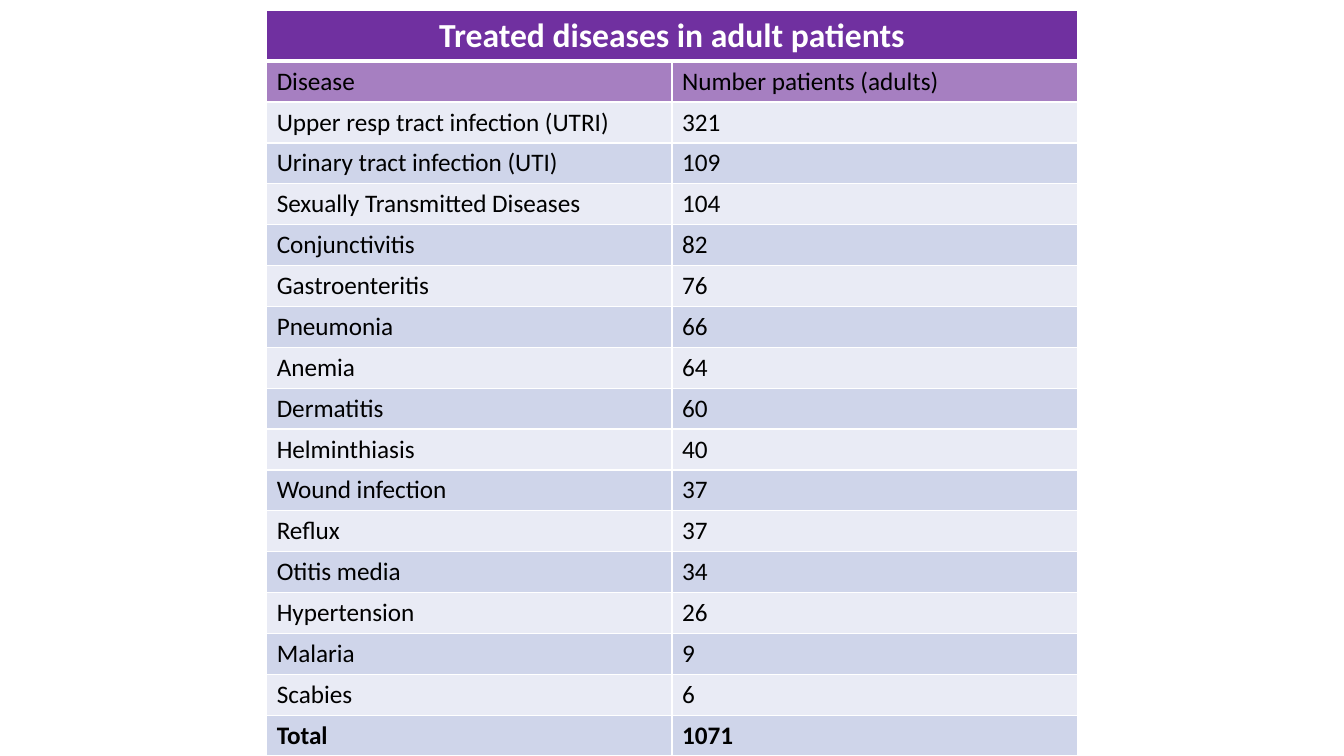
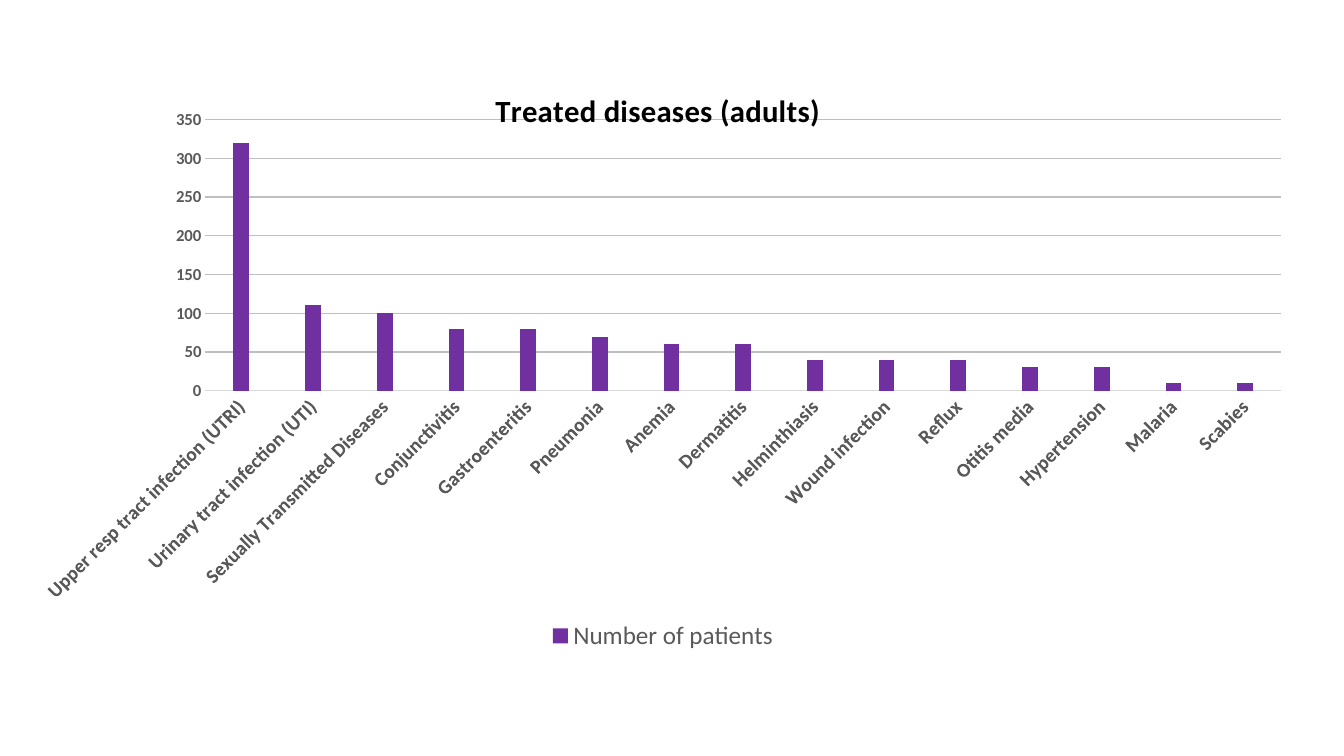
from lxml.etree import SubElement
from pptx import Presentation
from pptx.chart.data import CategoryChartData
from pptx.dml.color import RGBColor
from pptx.enum.chart import XL_CHART_TYPE as ChartType, XL_LEGEND_POSITION as LegendSpot
from pptx.enum.chart import XL_TICK_MARK as TickMark
from pptx.enum.text import PP_ALIGN as Align
from pptx.oxml.ns import qn
from pptx.util import Inches, Pt

FONT = "Calibri"
COLORS = {
    name: RGBColor.from_string(value)
    for name, value in {
        "purple": "7030A0", "lilac": "A67FC1", "light": "E9EBF5", "dark": "CFD5EA",
        "white": "FFFFFF", "black": "000000", "label": "595959",
        "axis": "D9D9D9", "grid": "BFBFBF",
    }.items()
}
PATIENTS = {
    "Upper resp tract infection (UTRI)": 321,
    "Urinary tract infection (UTI)": 109,
    "Sexually Transmitted Diseases": 104,
    "Conjunctivitis": 82,
    "Gastroenteritis": 76,
    "Pneumonia": 66,
    "Anemia": 64,
    "Dermatitis": 60,
    "Helminthiasis": 40,
    "Wound infection": 37,
    "Reflux": 37,
    "Otitis media": 34,
    "Hypertension": 26,
    "Malaria": 9,
    "Scabies": 6,
}


def style(font, size, color, bold=False):
    font.name, font.size, font.bold = FONT, Pt(size), bold
    font.color.rgb = COLORS[color]


def place(part, index, **shares):
    """Give a chart part a manual layout, in shares of the chart's size."""
    old = part.find(qn("c:layout"))
    if old is not None:
        part.remove(old)
    layout = SubElement(part, qn("c:layout"))
    part.insert(index, layout)
    manual = SubElement(layout, qn("c:manualLayout"))
    for tag, value in shares.items():
        SubElement(manual, qn(f"c:{tag}")).set("val", str(value))


deck = Presentation()
deck.slide_width, deck.slide_height = Inches(13.33), Inches(7.5)
W = deck.slide_width
blank = deck.slide_layouts[6]

# Table of diseases
rows = [
    ("Treated diseases in adult patients", ""),
    ("Disease", "Number patients (adults)"),
    *PATIENTS.items(),
    ("Total", sum(PATIENTS.values())),
]
title_height, row_height = Inches(0.49), Inches(0.4)
table_width = Inches(8.04)
diseases = deck.slides.add_slide(blank).shapes.add_table(
    len(rows), 2, (W - table_width) // 2, Inches(0.1),
    table_width, title_height + row_height * (len(rows) - 1),
).table
diseases.cell(0, 0).merge(diseases.cell(0, 1))

for r, row in enumerate(rows):
    is_title, is_total = r == 0, r == len(rows) - 1
    diseases.rows[r].height = title_height if is_title else row_height
    fill = ("purple", "lilac")[r] if r < 2 else ("light", "dark")[r % 2]
    for c, text in enumerate(row):
        cell = diseases.cell(r, c)
        borders = cell._tc.get_or_add_tcPr()
        for side in ("lnL", "lnR", "lnT", "lnB"):
            thick = (is_title and side == "lnB") or (r == 1 and side == "lnT")
            line = SubElement(borders, qn(f"a:{side}"), w=str(Pt(3 if thick else 1)))
            paint = SubElement(line, qn("a:solidFill"))
            SubElement(paint, qn("a:srgbClr"), val=str(COLORS["white"]))
        cell.fill.solid()
        cell.fill.fore_color.rgb = COLORS[fill]
        if cell.is_spanned:
            continue
        paragraph = cell.text_frame.paragraphs[0]
        paragraph.alignment = Align.CENTER if is_title else Align.LEFT
        run = paragraph.add_run()
        run.text = str(text)
        style(run.font, 24 if is_title else 18, "white" if is_title else "black",
              is_title or is_total)

# Chart of diseases, to the nearest ten patients
data = CategoryChartData()
data.categories = list(PATIENTS)
data.add_series("Number of patients", [round(count, -1) for count in PATIENTS.values()])
chart = deck.slides.add_slide(blank).shapes.add_chart(
    ChartType.COLUMN_CLUSTERED, Inches(0.42), Inches(0.66),
    Inches(12.29), Inches(5.85), data,
).chart
style(chart.font, 10, "black")

heading = chart.chart_title.text_frame.paragraphs[0].add_run()
heading.text = "Treated diseases (adults)"
style(heading.font, 22, "black", True)
heading._r.get_or_add_rPr().set("spc", "30")
title = chart.chart_title._element
place(title, 1, xMode="edge", yMode="edge", x=0.36, y=0.03)
title.find(qn("c:overlay")).set("val", "1")

plot = chart.plots[0]
plot.gap_width, plot.overlap, plot.vary_by_categories = 355, -70, False
bars = plot.series[0].format.fill
bars.solid()
bars.fore_color.rgb = COLORS["purple"]
plot_area = chart._chartSpace.chart.plotArea
place(plot_area, 0, layoutTarget="inner", xMode="edge", yMode="edge",
      x=0.13, y=0.09, w=0.87, h=0.46)

names, counts = chart.category_axis, chart.value_axis
for axis, size in ((names, 14), (counts, 12)):
    axis.major_tick_mark = axis.minor_tick_mark = TickMark.NONE
    style(axis.tick_labels.font, size, "label", True)
names.format.line.color.rgb = COLORS["axis"]
names.format.line.width = Pt(0.75)
names._element.find(qn("c:txPr")).find(qn("a:bodyPr")).set("rot", str(-45 * 60000))
counts.minimum_scale, counts.maximum_scale, counts.major_unit = 0, 350, 50
counts.format.line.fill.background()
counts.major_gridlines.format.line.color.rgb = COLORS["grid"]
counts.major_gridlines.format.line.width = Pt(0.75)

chart.has_legend = True
chart.legend.position = LegendSpot.BOTTOM
chart.legend.include_in_layout = False
style(chart.legend.font, 18, "label")

deck.save("out.pptx")
